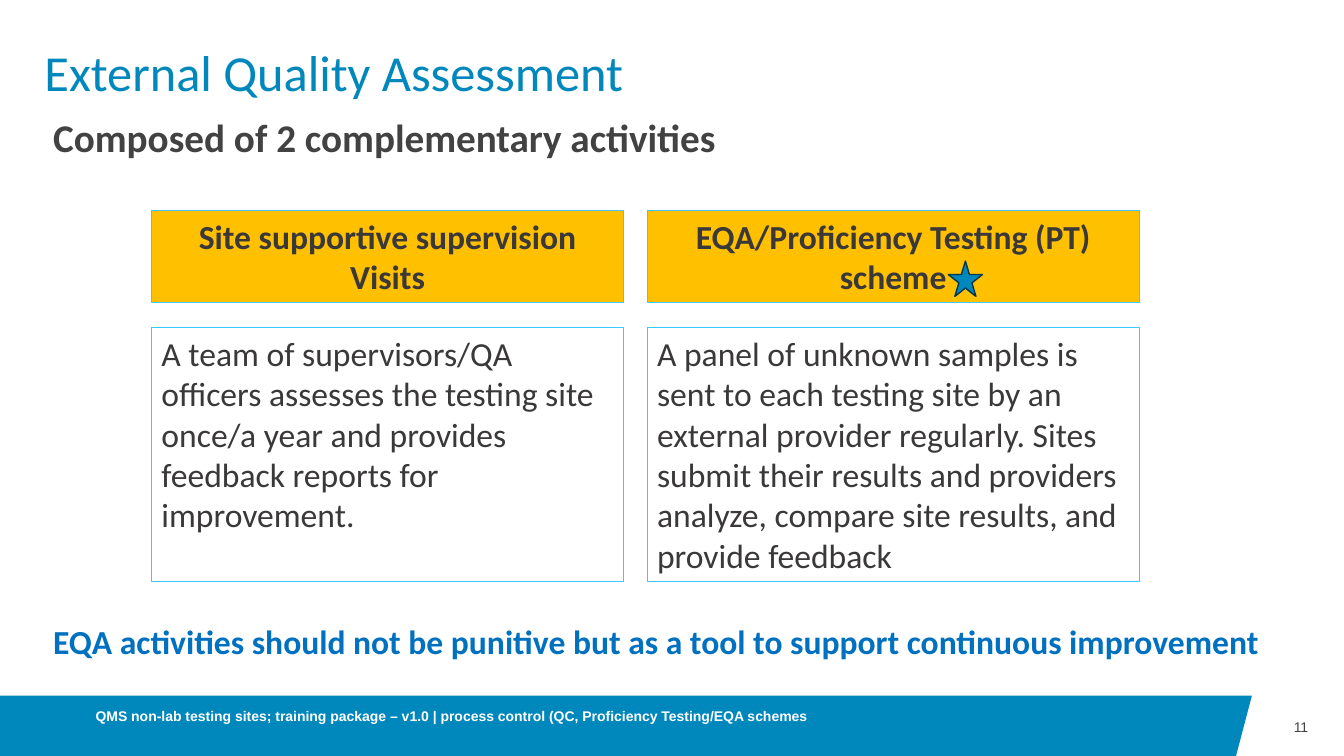
"""Build the External Quality Assessment slide."""
from pptx import Presentation, util as u
from pptx.dml.color import RGBColor
from pptx.enum import shapes, text

BLUE = RGBColor(0x00, 0x87, 0xBC)
NAVY = RGBColor(0x00, 0x38, 0x4F)
SKY = RGBColor(0x3D, 0xC9, 0xFF)
AMBER = RGBColor(0xFF, 0xC0, 0x00)
WHITE = RGBColor(0xFF, 0xFF, 0xFF)
GREY = RGBColor(0x42, 0x42, 0x42)
DARK = RGBColor(0x3A, 0x38, 0x38)
ACCENT = RGBColor(0x00, 0x70, 0xC0)
LEFT, CENTER, RIGHT = text.PP_ALIGN.LEFT, text.PP_ALIGN.CENTER, text.PP_ALIGN.RIGHT
TOP, MIDDLE, BOTTOM = (text.MSO_ANCHOR.TOP, text.MSO_ANCHOR.MIDDLE,
                       text.MSO_ANCHOR.BOTTOM)


class Deck:
    body_font = "Calibri"
    small_font = "Arial"

    def __init__(self):
        self.prs = Presentation()
        self.prs.slide_width, self.prs.slide_height = u.Cm(33.87), u.Cm(19.05)
        self.s = self.prs.slides.add_slide(self.prs.slide_layouts[5])

    def put_text(self, sp, words, size, color, bold=False, align=LEFT,
                 anchor=TOP, font=body_font, inset=(0.25, 0.13)):
        tf = sp.text_frame
        tf.text = words
        tf.word_wrap = True
        tf.auto_size = text.MSO_AUTO_SIZE.NONE
        tf.vertical_anchor = anchor
        tf.margin_left = tf.margin_right = u.Cm(inset[0])
        tf.margin_top = tf.margin_bottom = u.Cm(inset[1])
        p = tf.paragraphs[0]
        p.alignment = align
        f = p.runs[0].font
        f.name, f.size, f.bold = font, u.Pt(size), bold
        f.color.rgb = color
        return p

    def paint(self, sp, fill, line=None, width=0.75):
        sp.shadow.inherit = False
        sp.fill.solid()
        sp.fill.fore_color.rgb = fill
        if line is None:
            sp.line.fill.background()
        else:
            sp.line.color.rgb = line
            sp.line.width = u.Pt(width)

    def title(self, words, box):
        sp = self.s.shapes.title
        sp.left, sp.top, sp.width, sp.height = map(u.Cm, box)
        p = self.put_text(sp, words, 36, BLUE, anchor=BOTTOM, inset=(0, 0))
        p.line_spacing = 0.9

    def label(self, words, box, size, color, **style):
        sp = self.s.shapes.add_textbox(*map(u.Cm, box))
        self.put_text(sp, words, size, color, **style)

    def small(self, words, box, color, **style):
        self.label(words, box, 10, color, anchor=MIDDLE,
                   font=self.small_font, inset=(0, 0), **style)

    def card(self, words, box, fill, **style):
        sp = self.s.shapes.add_shape(shapes.MSO_SHAPE.RECTANGLE, *map(u.Cm, box))
        self.paint(sp, fill, SKY)
        self.put_text(sp, words, 24, DARK, **style)

    def star(self, box):
        sp = self.s.shapes.add_shape(shapes.MSO_SHAPE.STAR_5_POINT, *map(u.Cm, box))
        self.paint(sp, BLUE, NAVY, 1)

    def band(self, points):
        start, *rest = [(u.Cm(x), u.Cm(y)) for x, y in points]
        fb = self.s.shapes.build_freeform(*start)
        fb.add_line_segments(rest, close=True)
        self.paint(fb.convert_to_shape(), BLUE)


def main():
    d = Deck()
    d.band([(0, 17.53), (31.55, 17.53), (31.15, 19.05), (0, 19.05)])
    d.title("External Quality Assessment", (1.12, 0.13, 29.21, 2.46))
    d.small("11", (31.55, 17.53, 1.42, 1.6), GREY, align=RIGHT)
    d.small("QMS non-lab testing sites; training package – v1.0 | process control "
            "(QC, Proficiency Testing/EQA schemes",
            (2.41, 17.53, 20.32, 1), WHITE, bold=True)
    d.label("Composed of 2 complementary activities",
            (1.09, 2.72, 27.56, 1.45), 28, GREY, bold=True)
    activities = [
        (3.82, 11.9, "Site supportive supervision Visits",
         "A team of supervisors/QA officers assesses the testing site once/a year "
         "and provides feedback reports for improvement."),
        (16.31, 12.4, "EQA/Proficiency Testing (PT) scheme",
         "A panel of unknown samples is sent to each testing site by an external "
         "provider regularly. Sites submit their results and providers analyze, "
         "compare site results, and provide feedback"),
    ]
    for left, width, heading, detail in activities:
        d.card(heading, (left, 5.31, width, 2.31), AMBER, bold=True, align=CENTER)
        d.card(detail, (left, 8.26, width, 6.4), WHITE)
    d.label("EQA activities should not be punitive but as a tool to support "
            "continuous improvement", (1.09, 15.52, 31.67, 1.27), 24, ACCENT, bold=True)
    d.star((23.9, 6.58, 0.86, 0.89))
    d.prs.save("out.pptx")


if __name__ == "__main__":
    main()
